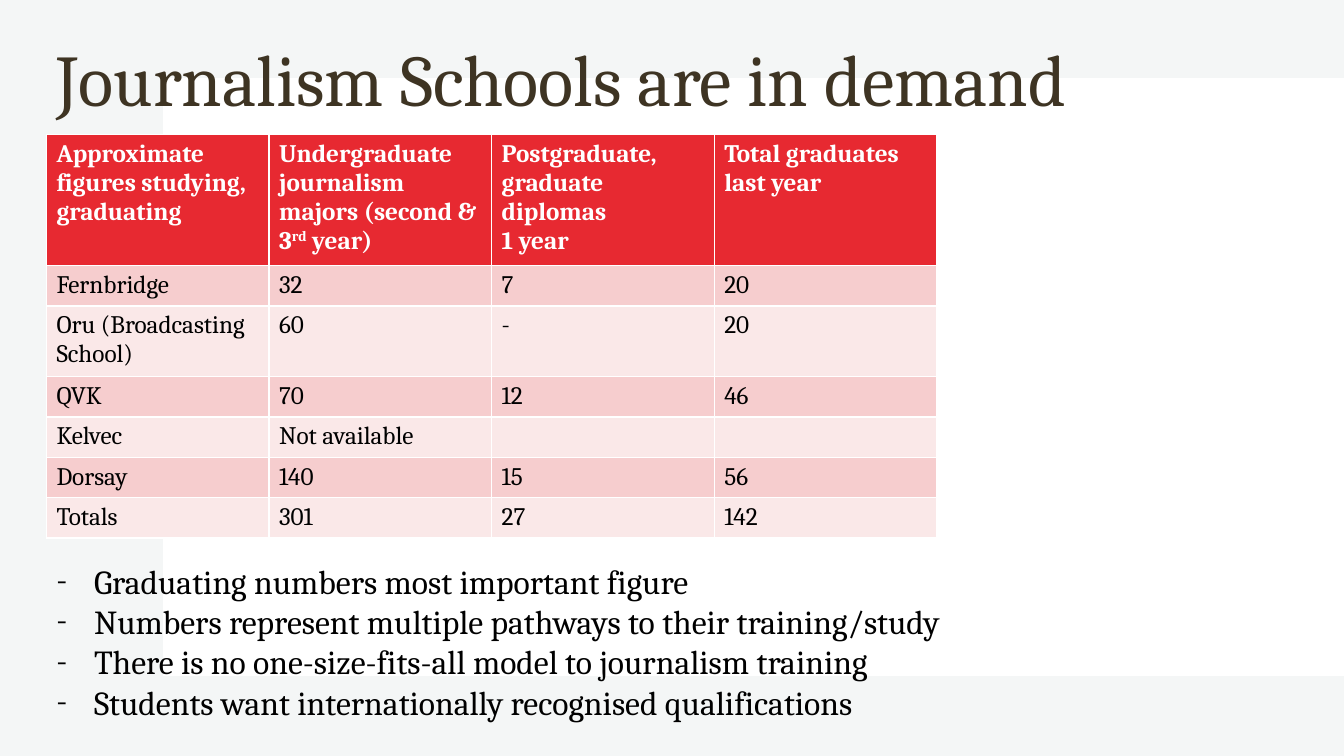
"""Build the slide on journalism school student and graduate numbers."""
from dataclasses import dataclass

from lxml.etree import SubElement
from pptx import Presentation
from pptx.dml.color import RGBColor
from pptx.enum.shapes import MSO_SHAPE
from pptx.enum.text import MSO_ANCHOR
from pptx.oxml.ns import qn
from pptx.slide import Slide
from pptx.text.text import TextFrame, _Paragraph
from pptx.util import Cm, Pt

WHITE = RGBColor(0xFF, 0xFF, 0xFF)
BLACK = RGBColor(0x00, 0x00, 0x00)
PALE_GREY = RGBColor(0xF4, 0xF6, 0xF6)
BROWN = RGBColor(0x3E, 0x34, 0x23)
RED = RGBColor(0xE7, 0x29, 0x31)
PINK = RGBColor(0xF6, 0xCD, 0xCE)
PALE_PINK = RGBColor(0xFA, 0xE8, 0xE8)

FONT = "Cambria"
LEFT = 1.17
COLUMN_WIDTH = 5.61
ROW_HEIGHTS = (3.22, 0.99, 1.73, 0.99, 0.99, 0.99, 0.99)


@dataclass(frozen=True)
class Box:
    """Position and size in centimetres."""
    left: float
    top: float
    width: float
    height: float

    def lengths(self) -> tuple[Cm, Cm, Cm, Cm]:
        """Return the four measures as lengths."""
        return Cm(self.left), Cm(self.top), Cm(self.width), Cm(self.height)


@dataclass(frozen=True)
class TextStyle:
    """Look of a run of text."""
    size: int
    color: RGBColor
    bold: bool = False


@dataclass(frozen=True)
class Piece:
    """Words that share one baseline."""
    words: str
    superscript: bool = False


@dataclass(frozen=True)
class Panel:
    """Plain background rectangle."""
    box: Box
    color: RGBColor


TITLE_STYLE = TextStyle(52, BROWN)
HEADING_STYLE = TextStyle(18, WHITE, True)
FIGURE_STYLE = TextStyle(18, BLACK)
POINT_STYLE = TextStyle(24, BLACK)

PANELS = (
    Panel(Box(0, 0, 33.87, 19.05), PALE_GREY),
    Panel(Box(4.11, 1.97, 29.76, 15.06), WHITE),
)
HEADINGS = (
    ((Piece("Approximate"),), (Piece("figures studying, graduating"),)),
    ((Piece("Undergraduate journalism majors (second & 3"),
      Piece("rd", True), Piece(" year)")),),
    ((Piece("Postgraduate, graduate diplomas"),), (Piece("1 year"),)),
    ((Piece("Total graduates last year"),),),
)
SCHOOLS = (
    ("Fernbridge", "32", "7", "20"),
    ("Oru (Broadcasting School)", "60", "-", "20"),
    ("QVK", "70", "12", "46"),
    ("Kelvec", "Not available", "", ""),
    ("Dorsay", "140", "15", "56"),
    ("Totals", "301", "27", "142"),
)
POINTS = (
    "Graduating numbers most important figure",
    "Numbers represent multiple pathways to their training/study",
    "There is no one-size-fits-all model to journalism training",
    "Students want internationally recognised qualifications",
)


def add_piece(paragraph: _Paragraph, piece: Piece, style: TextStyle) -> None:
    """Append one styled run."""
    run = paragraph.add_run()
    run.text = piece.words
    run.font.name = FONT
    run.font.size = Pt(style.size)
    run.font.bold = style.bold
    run.font.color.rgb = style.color
    if piece.superscript:
        run.font._element.set("baseline", "30000")


def write(frame: TextFrame, paragraphs: tuple, style: TextStyle) -> None:
    """Fill a text frame paragraph by paragraph."""
    frame.word_wrap = True
    for index, pieces in enumerate(paragraphs):
        paragraph = frame.add_paragraph() if index else frame.paragraphs[0]
        for piece in pieces:
            add_piece(paragraph, piece, style)


def draw_panel(slide: Slide, panel: Panel) -> None:
    """Draw a borderless background rectangle."""
    rectangle = slide.shapes.add_shape(MSO_SHAPE.RECTANGLE, *panel.box.lengths())
    rectangle.shadow.inherit = False
    rectangle.fill.solid()
    rectangle.fill.fore_color.rgb = panel.color
    rectangle.line.fill.background()


def draw_title(slide: Slide) -> None:
    """Draw the slide heading."""
    title = slide.shapes.add_textbox(*Box(LEFT, 0.25, 29.29, 3.68).lengths())
    frame = title.text_frame
    write(frame, ((Piece("Journalism Schools are in demand"),),), TITLE_STYLE)
    frame.vertical_anchor = MSO_ANCHOR.MIDDLE
    frame.paragraphs[0].line_spacing = 0.9


def draw_table(slide: Slide) -> None:
    """Draw the table of schools, with the white rules of its built-in style."""
    box = Box(LEFT, 3.39, COLUMN_WIDTH * len(HEADINGS), sum(ROW_HEIGHTS))
    table = slide.shapes.add_table(
        len(ROW_HEIGHTS), len(HEADINGS), *box.lengths()).table
    for column in table.columns:
        column.width = Cm(COLUMN_WIDTH)
    for row, height in zip(table.rows, ROW_HEIGHTS):
        row.height = Cm(height)
    figures = [[((Piece(value),),) if value else () for value in school]
               for school in SCHOOLS]
    for row_index, entries in enumerate((HEADINGS, *figures)):
        is_heading = row_index == 0
        style = HEADING_STYLE if is_heading else FIGURE_STYLE
        band = PINK if row_index % 2 else PALE_PINK
        for column_index, paragraphs in enumerate(entries):
            cell = table.cell(row_index, column_index)
            write(cell.text_frame, paragraphs, style)
            cell.fill.solid()
            cell.fill.fore_color.rgb = RED if is_heading else band


def draw_points(slide: Slide) -> None:
    """Draw the dashed list under the table."""
    points = slide.shapes.add_textbox(*Box(LEFT, 14, 31.09, 4.37).lengths())
    write(points.text_frame, tuple((Piece(point),) for point in POINTS), POINT_STYLE)
    for paragraph in points.text_frame.paragraphs:
        properties = paragraph._p.get_or_add_pPr()
        properties.set("marL", str(Cm(0.95)))
        properties.set("indent", str(Cm(-0.95)))
        SubElement(properties, qn("a:buFont"), typeface=FONT)
        SubElement(properties, qn("a:buChar"), char="-")


def main() -> None:
    """Build and save the presentation."""
    presentation = Presentation()
    presentation.slide_width = Cm(33.87)
    presentation.slide_height = Cm(19.05)
    slide = presentation.slides.add_slide(presentation.slide_layouts[6])
    for panel in PANELS:
        draw_panel(slide, panel)
    draw_title(slide)
    draw_table(slide)
    draw_points(slide)
    presentation.save("out.pptx")


if __name__ == "__main__":
    main()
